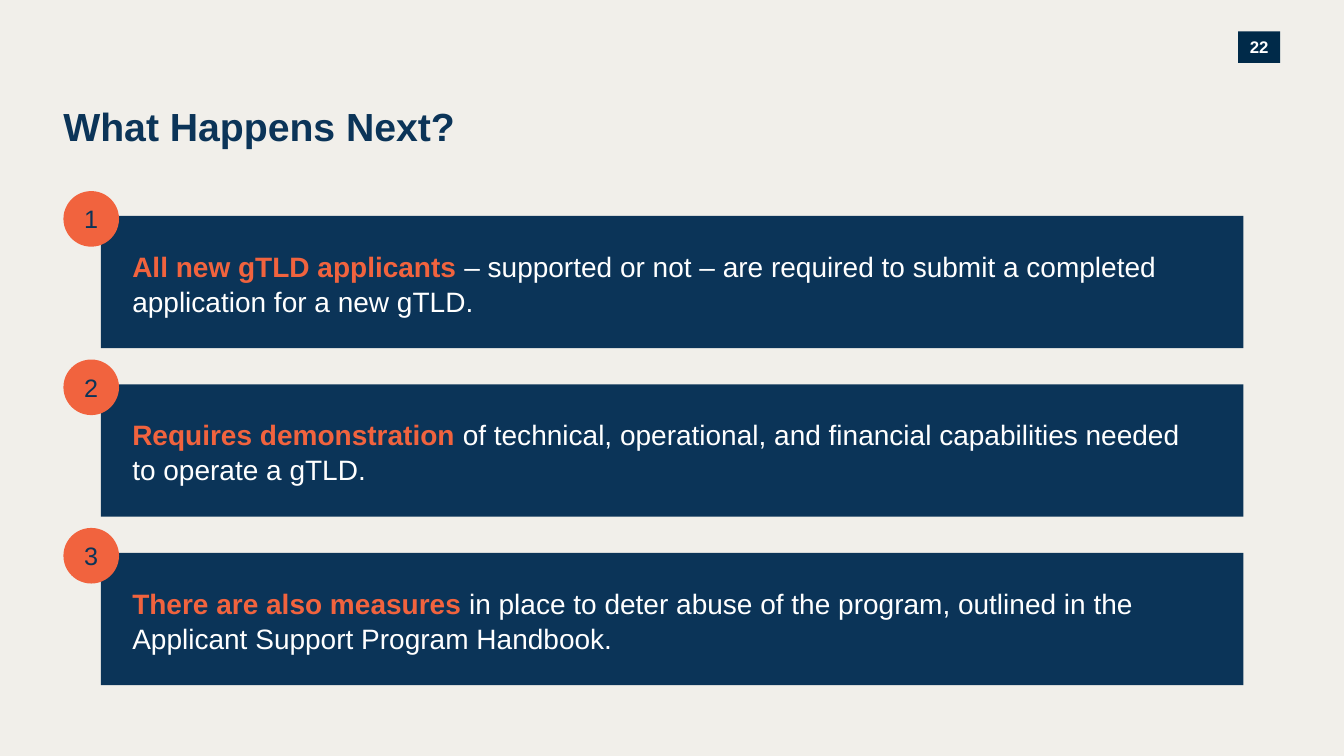
from dataclasses import dataclass

from lxml.etree import SubElement
from pptx import Presentation
from pptx.dml.color import RGBColor
from pptx.enum.shapes import MSO_SHAPE
from pptx.enum.text import MSO_ANCHOR, PP_ALIGN
from pptx.util import Pt


@dataclass(frozen=True)
class Theme:
    """Colours and type sizes of the slide."""
    background: RGBColor = RGBColor.from_string("F1EFEA")
    navy: RGBColor = RGBColor.from_string("0B3458")
    dark: RGBColor = RGBColor.from_string("002A49")
    orange: RGBColor = RGBColor.from_string("F1633E")
    white: RGBColor = RGBColor.from_string("FFFFFF")
    font: str = "Arial"
    title_size: int = 28
    body_size: int = 20
    marker_size: int = 18
    page_size: int = 12


THEME = Theme()
STEPS = [
    ("All new gTLD applicants ",
     "– supported or not – are required to submit a completed application for a new gTLD."),
    ("Requires demonstration ",
     "of technical, operational, and financial capabilities needed to operate a gTLD."),
    ("There are also measures ",
     "in place to deter abuse of the program, outlined in the Applicant Support Program Handbook."),
]
FIRST_STEP_TOP = 136.5
STEP_PITCH = 120.3


def set_frame(shape, margins, anchor):
    """Set wrapping, margins (left, top, right, bottom) and anchor; return the first paragraph."""
    frame = shape.text_frame
    frame.word_wrap = True
    frame.vertical_anchor = anchor
    (frame.margin_left, frame.margin_top,
     frame.margin_right, frame.margin_bottom) = map(Pt, margins)
    return frame.paragraphs[0]


def set_font(font, size, color, bold=False):
    """Give a font the theme typeface with a size, colour and weight."""
    font.name = THEME.font
    font.size = Pt(size)
    font.bold = bold
    font.color.rgb = color


def add_block(slide, kind, left, top, width, height, fill):
    """Add a flat filled shape without outline or shadow."""
    shape = slide.shapes.add_shape(kind, Pt(left), Pt(top), Pt(width), Pt(height))
    shape.shadow.inherit = False
    shape.fill.solid()
    shape.fill.fore_color.rgb = fill
    shape.line.fill.background()
    return shape


def add_label(shape, text, size, color, bold=False):
    """Write one centred label into a shape."""
    paragraph = set_frame(shape, (0, 0, 0, 0), MSO_ANCHOR.MIDDLE)
    paragraph.text = text
    paragraph.alignment = PP_ALIGN.CENTER
    set_font(paragraph.font, size, color, bold)


def add_title(slide, text):
    """Add the slide title."""
    box = slide.shapes.add_textbox(Pt(45.3), Pt(70.6), Pt(564.5), Pt(41.8))
    paragraph = set_frame(box, (0, 0, 0, 0), MSO_ANCHOR.TOP)
    paragraph.text = text
    paragraph.line_spacing = 1.08
    set_font(paragraph.font, THEME.title_size, THEME.navy, bold=True)


def add_step(slide, number, lead, detail):
    """Add a numbered panel with a highlighted lead phrase."""
    top = FIRST_STEP_TOP + (number - 1) * STEP_PITCH
    panel = add_block(slide, MSO_SHAPE.RECTANGLE, 72, top + 17.8, 816.2, 94.5, THEME.navy)
    paragraph = set_frame(panel, (22.5, 22.5, 25, 22.5), MSO_ANCHOR.TOP)
    paragraph.alignment = PP_ALIGN.LEFT
    paragraph.line_spacing = 1.05
    for text, color, bold in ((lead, THEME.orange, True), (detail, THEME.white, False)):
        run = paragraph.add_run()
        run.text = text
        set_font(run.font, THEME.body_size, color, bold)
    marker = add_block(slide, MSO_SHAPE.OVAL, 45.3, top, 39.7, 39.7, THEME.orange)
    add_label(marker, str(number), THEME.marker_size, THEME.navy)


def main():
    """Build the slide and save it."""
    presentation = Presentation()
    presentation.slide_width, presentation.slide_height = Pt(960), Pt(540)
    slide = presentation.slides.add_slide(presentation.slide_layouts[6])
    slide.background.fill.solid()
    slide.background.fill.fore_color.rgb = THEME.background
    page = add_block(slide, MSO_SHAPE.RECTANGLE, 884.3, 22.5, 30.2, 22.5, THEME.dark)
    add_label(page, "22", THEME.page_size, THEME.white, bold=True)
    add_title(slide, "What Happens Next?")
    for number, (lead, detail) in enumerate(STEPS, start=1):
        add_step(slide, number, lead, detail)
    presentation.save("out.pptx")


if __name__ == "__main__":
    main()
